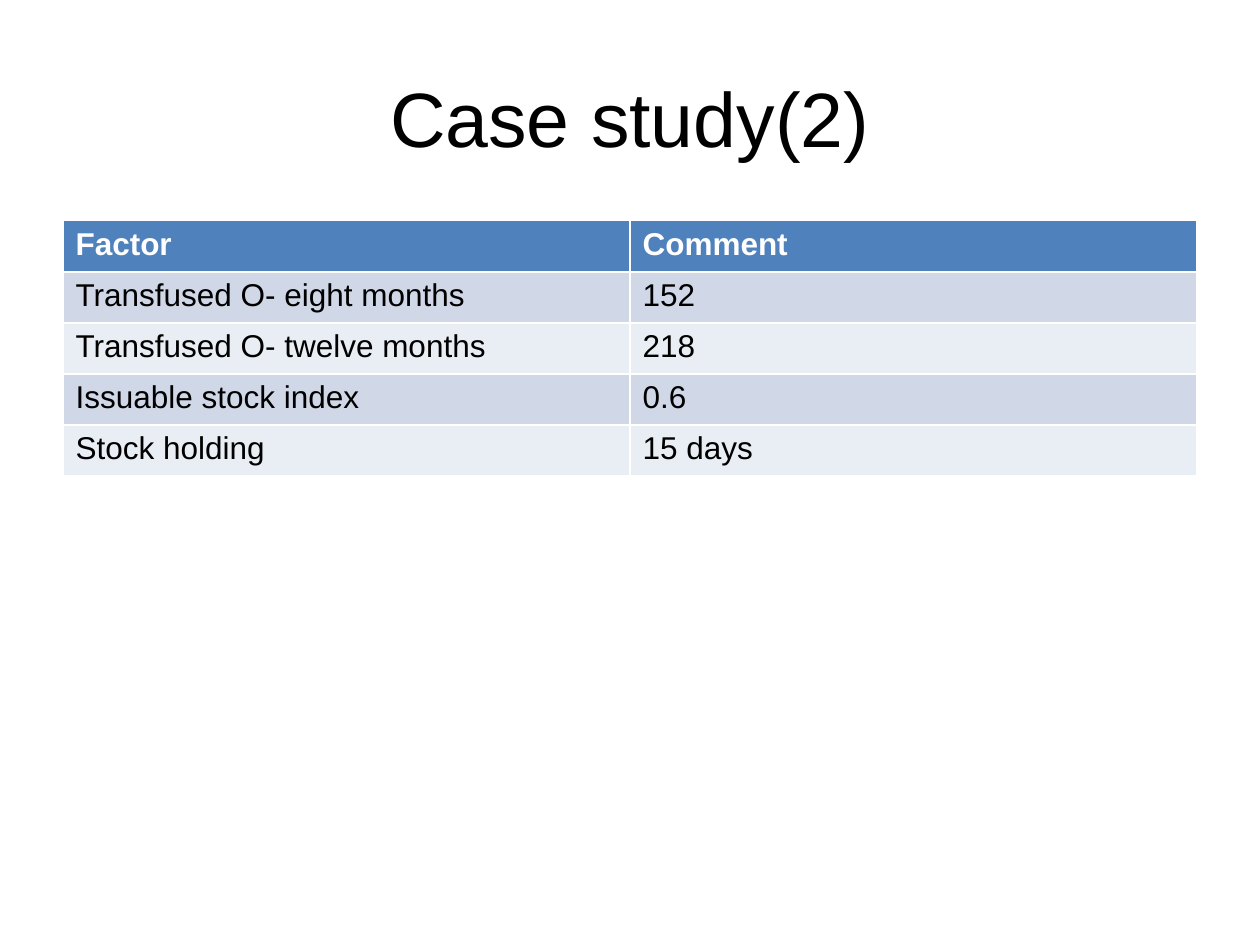
from pptx import Presentation
from pptx.dml.color import RGBColor
from pptx.enum.text import MSO_ANCHOR, PP_ALIGN
from pptx.util import Cm, Pt

BLACK = RGBColor(0x00, 0x00, 0x00)
WHITE = RGBColor(0xFF, 0xFF, 0xFF)
HEADER_BLUE = RGBColor(0x4F, 0x81, 0xBD)
BAND_DARK = RGBColor(0xD0, 0xD8, 0xE8)
BAND_LIGHT = RGBColor(0xE9, 0xED, 0xF4)

FACTORS = [
    ("Factor", "Comment"),
    ("Transfused O- eight months", "152"),
    ("Transfused O- twelve months", "218"),
    ("Issuable stock index", "0.6"),
    ("Stock holding", "15 days"),
]
ROW_HEIGHT = Cm(1.03)
COLUMN_WIDTH = Cm(11.43)


def format_text(text_frame, size, color, bold=False):
    for paragraph in text_frame.paragraphs:
        for run in paragraph.runs:
            run.font.name = "Arial"
            run.font.size = Pt(size)
            run.font.bold = bold
            run.font.color.rgb = color


presentation = Presentation()
presentation.slide_width = Cm(25.4)
presentation.slide_height = Cm(19.05)
slide = presentation.slides.add_slide(presentation.slide_layouts[5])

title = slide.shapes.title
title.left, title.top = Cm(1.27), Cm(0.76)
title.width, title.height = Cm(22.86), Cm(3.18)
title.text_frame.text = "Case study(2)"
title.text_frame.vertical_anchor = MSO_ANCHOR.MIDDLE
title.text_frame.paragraphs[0].alignment = PP_ALIGN.CENTER
format_text(title.text_frame, 44, BLACK)

table = slide.shapes.add_table(
    len(FACTORS), 2, Cm(1.27), Cm(4.45), 2 * COLUMN_WIDTH, len(FACTORS) * ROW_HEIGHT
).table
for column in table.columns:
    column.width = COLUMN_WIDTH

for row_index, values in enumerate(FACTORS):
    table.rows[row_index].height = ROW_HEIGHT
    is_header = row_index == 0
    if is_header:
        fill_color = HEADER_BLUE
    else:
        fill_color = BAND_DARK if row_index % 2 else BAND_LIGHT
    for column_index, value in enumerate(values):
        cell = table.cell(row_index, column_index)
        cell.text_frame.text = value
        cell.fill.solid()
        cell.fill.fore_color.rgb = fill_color
        format_text(cell.text_frame, 18, WHITE if is_header else BLACK, is_header)

presentation.save("out.pptx")
